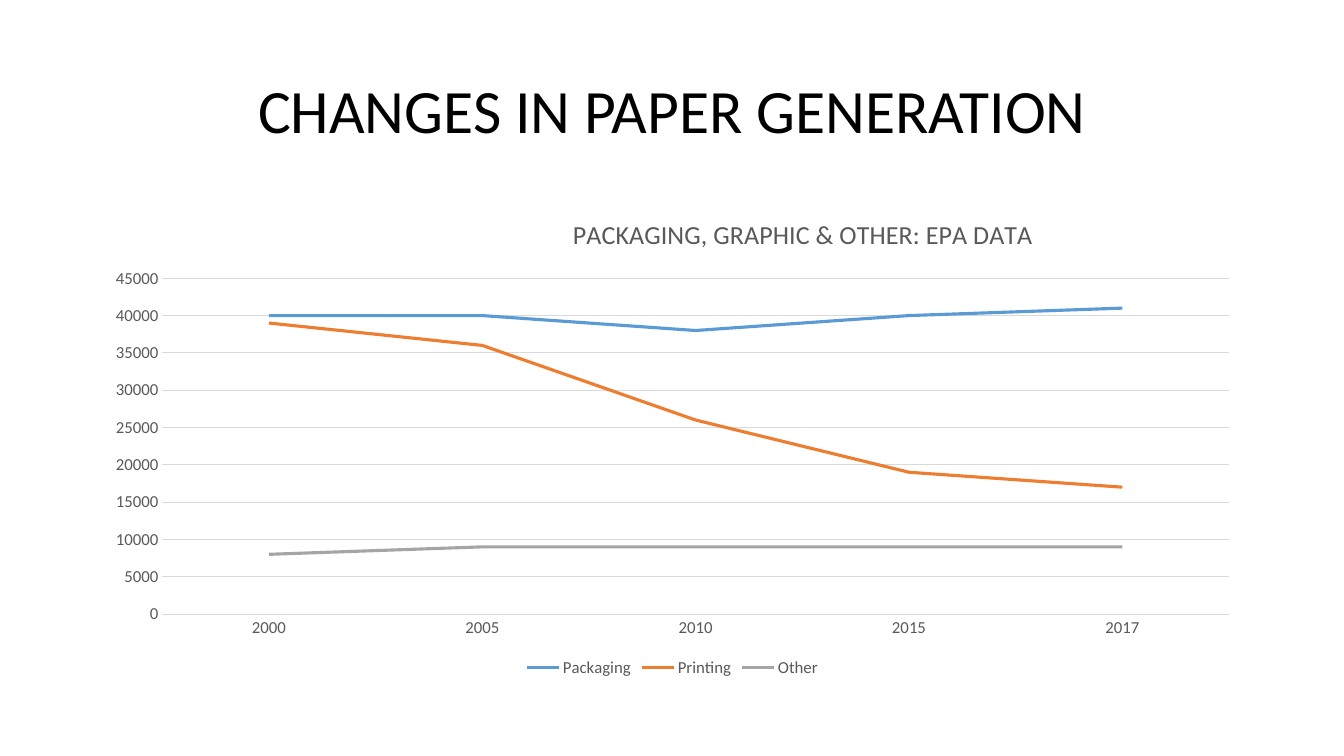
from dataclasses import dataclass

from lxml.etree import SubElement
from pptx import Presentation
from pptx.chart.data import CategoryChartData
from pptx.dml.color import RGBColor
from pptx.enum.chart import XL_CHART_TYPE, XL_LEGEND_POSITION, XL_MARKER_STYLE, XL_TICK_MARK
from pptx.enum.text import MSO_ANCHOR, MSO_AUTO_SIZE, PP_ALIGN
from pptx.oxml import parse_xml
from pptx.oxml.ns import nsdecls, qn
from pptx.util import Inches, Pt


@dataclass(frozen=True)
class Theme:
    font: str = "Calibri"
    title_color: str = "000000"
    label_color: str = "595959"
    grid_color: str = "D9D9D9"
    title_size: float = 44
    chart_title_size: float = 18.6
    label_size: float = 12
    grid_width: float = 0.75
    series_width: float = 2.25


THEME = Theme()
YEARS = ("2000", "2005", "2010", "2015", "2017")
PAPER_SERIES = (
    ("Packaging", "5B9BD5", (40000, 40000, 38000, 40000, 41000)),
    ("Printing", "ED7D31", (39000, 36000, 26000, 19000, 17000)),
    ("Other", "A5A5A5", (8000, 9000, 9000, 9000, 9000)),
)


def style_font(font, size, color):
    font.name = THEME.font
    font.size = Pt(size)
    font.bold = False
    font.color.rgb = RGBColor.from_string(color)


def style_line(line, color, width):
    line.color.rgb = RGBColor.from_string(color)
    line.width = Pt(width)


def set_layout(element, index, **settings):
    for old_layout in element.findall(qn("c:layout")):
        element.remove(old_layout)
    layout = parse_xml(f"<c:layout {nsdecls('c')}/>")
    manual = SubElement(layout, qn("c:manualLayout"))
    for name, value in settings.items():
        SubElement(manual, qn(f"c:{name}")).set("val", str(value))
    element.insert(index, layout)


def add_title(slide, text):
    title = slide.shapes.title
    title.left, title.top = Inches(0.92), Inches(0.4)
    title.width, title.height = Inches(11.5), Inches(1.45)
    frame = title.text_frame
    frame.word_wrap = True
    frame.auto_size = MSO_AUTO_SIZE.NONE
    frame.vertical_anchor = MSO_ANCHOR.MIDDLE
    paragraph = frame.paragraphs[0]
    paragraph.alignment = PP_ALIGN.CENTER
    paragraph.line_spacing = 0.9
    run = paragraph.add_run()
    run.text = text
    style_font(run.font, THEME.title_size, THEME.title_color)


def add_chart_title(chart, text):
    chart.has_title = True
    chart_title = chart.chart_title
    run = chart_title.text_frame.paragraphs[0].add_run()
    run.text = text
    style_font(run.font, THEME.chart_title_size, THEME.label_color)
    chart_title.include_in_layout = False
    set_layout(chart_title._element, 1, xMode="edge", yMode="edge", x=0.41, y=0.02)


def style_axes(chart):
    for axis in (chart.category_axis, chart.value_axis):
        axis.major_tick_mark = XL_TICK_MARK.NONE
        axis.minor_tick_mark = XL_TICK_MARK.NONE
        style_font(axis.tick_labels.font, THEME.label_size, THEME.label_color)
    style_line(chart.category_axis.format.line, THEME.grid_color, THEME.grid_width)
    value_axis = chart.value_axis
    value_axis.minimum_scale = 0
    value_axis.maximum_scale = 45000
    value_axis.major_unit = 5000
    value_axis.format.line.fill.background()
    value_axis.has_major_gridlines = True
    style_line(value_axis.major_gridlines.format.line, THEME.grid_color, THEME.grid_width)


def add_legend(chart):
    chart.has_legend = True
    chart.legend.position = XL_LEGEND_POSITION.BOTTOM
    chart.legend.include_in_layout = False
    style_font(chart.legend.font, THEME.label_size, THEME.label_color)


def add_line_chart(slide, title):
    data = CategoryChartData(number_format="General")
    data.categories = YEARS
    for name, _, values in PAPER_SERIES:
        data.add_series(name, values)
    frame = slide.shapes.add_chart(
        XL_CHART_TYPE.LINE, Inches(0.92), Inches(2), Inches(11.5), Inches(4.76), data
    )
    chart = frame.chart
    style_font(chart.font, THEME.label_size, THEME.label_color)
    add_chart_title(chart, title)
    style_axes(chart)
    add_legend(chart)
    plot = chart.plots[0]
    plot.vary_by_categories = False
    for series, (_, color, _) in zip(plot.series, PAPER_SERIES):
        series.smooth = False
        series.marker.style = XL_MARKER_STYLE.NONE
        style_line(series.format.line, color, THEME.series_width)
    plot_area = chart._chartSpace.find(f".//{qn('c:plotArea')}")
    set_layout(
        plot_area, 0, layoutTarget="inner", xMode="edge", yMode="edge",
        x=0.06, y=0.16, w=0.92, h=0.7,
    )


def main():
    presentation = Presentation()
    presentation.slide_width = Inches(13.33)
    presentation.slide_height = Inches(7.5)
    slide = presentation.slides.add_slide(presentation.slide_layouts[5])
    add_title(slide, "CHANGES IN PAPER GENERATION")
    add_line_chart(slide, "PACKAGING, GRAPHIC & OTHER: EPA DATA")
    presentation.save("out.pptx")


if __name__ == "__main__":
    main()
